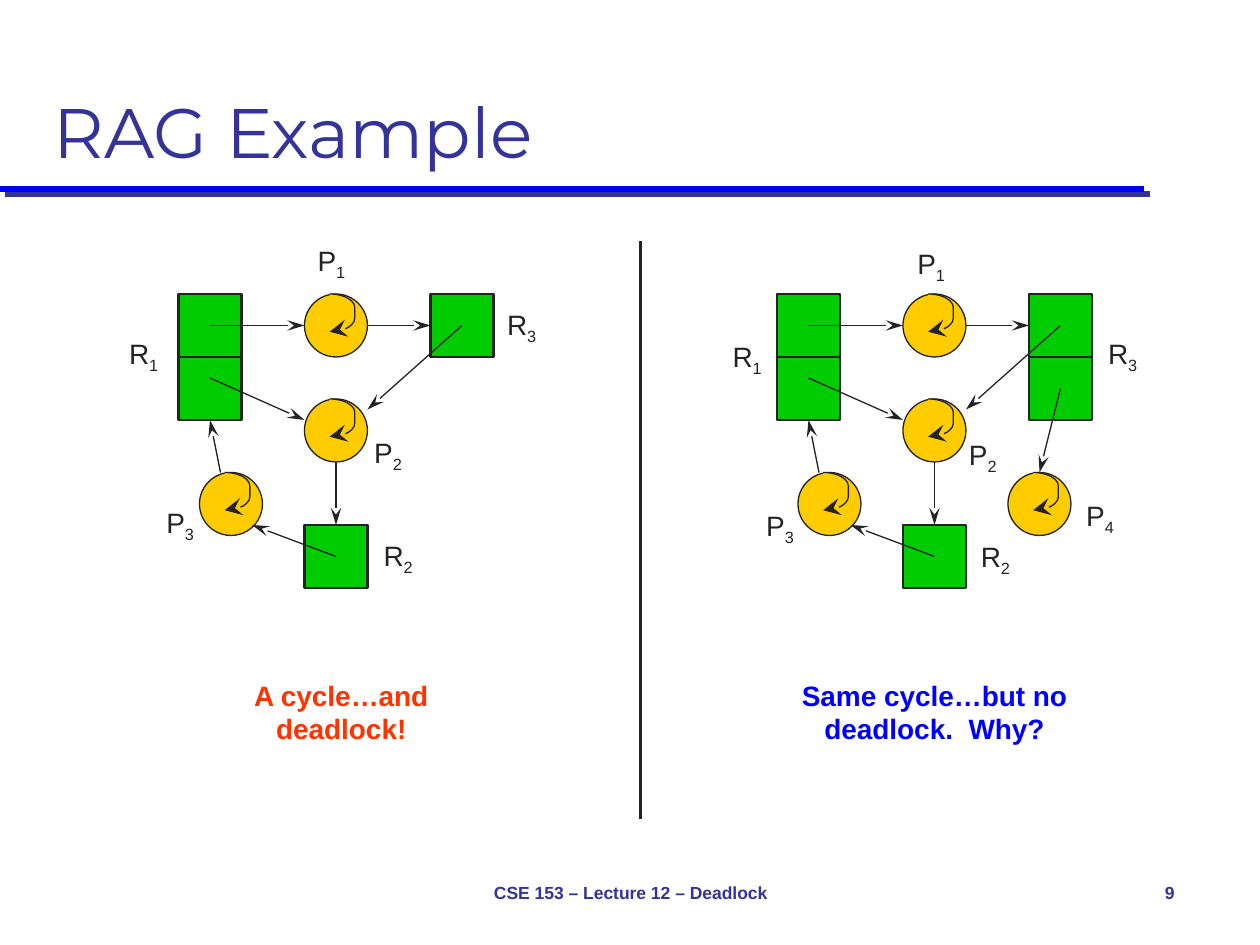
from lxml import etree
from pptx import Presentation, util as u
from pptx.dml.color import RGBColor
from pptx.enum import shapes as kinds, text as t
from pptx.oxml import ns

COLORS = {"navy": "333399", "blue": "0000FF", "red": "FF3300",
          "ink": "232323", "process": "FFCC00", "resource": "00CC00"}
GRID = 1 / 12          # inches per grid step
NODE = 6               # node side, in steps
TOP = 28               # first row of both graphs, in steps

# Places inside a graph are (column, row) steps from its top left corner.
RESOURCES = [(0, 0), (0, 6), (12, 22), (24, 0)]
PROCESSES = [(12, 0), (2, 17), (12, 10)]
EDGES = [((3, 3), (12, 3)), ((3, 8), (12, 12)), ((4, 17), (3, 12)),
         ((18, 3), (24, 3)), ((27, 3), (18, 11)), ((15, 25), (7, 22)),
         ((15, 16), (15, 22))]

# Label places are centres in inches.
GRAPHS = [
    dict(left=17, resources=RESOURCES, processes=PROCESSES, edges=EDGES,
         caption=("A cycle…and deadlock!", "red", 22, 21),
         labels=[("R1", 1.14, 2.82), ("P1", 2.63, 2.08), ("P2", 3.08, 3.6),
                 ("P3", 1.43, 4.16), ("R3", 4.14, 2.59), ("R2", 3.16, 4.42)]),
    dict(left=74, resources=RESOURCES + [(24, 6)],
         processes=PROCESSES + [(22, 17)],
         edges=EDGES + [((27, 9), (25, 17))],
         caption=("Same cycle…but no deadlock.  Why?", "blue", 75, 28),
         labels=[("R1", 5.93, 2.84), ("P1", 7.39, 2.1), ("P2", 7.8, 3.62),
                 ("P3", 6.19, 4.18), ("R3", 8.91, 2.82), ("R2", 7.9, 4.43),
                 ("P4", 8.73, 4.1)]),
]

prs = Presentation()
prs.slide_width, prs.slide_height = u.Inches(10), u.Inches(7.5)
slide = prs.slides.add_slide(prs.slide_layouts[6])


def rgb(name):
    return RGBColor.from_string(COLORS[name])


def steps(*values):
    return [u.Inches(value * GRID) for value in values]


def add_arrowhead(item, width):
    etree.SubElement(item.line._get_or_add_ln(), ns.qn("a:tailEnd"),
                     type="stealth", w=width, len="lg")


def add_line(start, end, color="ink", width=0.75):
    line = slide.shapes.add_connector(kinds.MSO_CONNECTOR.STRAIGHT,
                                      *steps(*start, *end))
    line.line.color.rgb = rgb(color)
    line.line.width = u.Pt(width)
    return line


def add_effects(line):
    return etree.SubElement(line._element.spPr, ns.qn("a:effectLst"))


def add_node(parent, kind, box, fill, width):
    node = parent.add_shape(kind, *steps(*box))
    node.shadow.inherit = False
    node.fill.solid()
    node.fill.fore_color.rgb = rgb(fill)
    node.line.color.rgb = rgb("ink")
    node.line.width = u.Pt(width)
    return node


def add_process(x, y):
    """Circle with a looping arrow inside, as one group."""
    group = slide.shapes.add_group_shape().shapes
    add_node(group, kinds.MSO_SHAPE.OVAL, (x, y, NODE, NODE), "process", 0.75)
    loop = add_node(group, kinds.MSO_SHAPE.RIGHT_BRACKET,
                    (x + 0.4 * NODE, y, 0.4 * NODE, 0.6 * NODE),
                    "process", 0.75)
    loop.adjustments[0] = 0.54
    add_arrowhead(loop, "lg")


def add_text(runs, box, size, color, align="CENTER", anchor="MIDDLE",
             font="Arial", bold=False, wrap=False):
    frame = slide.shapes.add_textbox(*map(u.Inches, box)).text_frame
    frame.word_wrap = wrap
    frame.vertical_anchor = t.MSO_ANCHOR[anchor]
    line = frame.paragraphs[0]
    line.alignment = t.PP_ALIGN[align]
    line.font.name, line.font.size, line.font.bold = font, u.Pt(size), bold
    line.font.color.rgb = rgb(color)
    for words in runs:
        line.add_run().text = words
    return line


def add_label(name, x, y):
    line = add_text(name, (x - 0.22, y - 0.18, 0.44, 0.37), 16, "ink")
    line.runs[1].font._element.set("baseline", "-25000")


def add_graph(left, resources, processes, edges, caption, labels):
    for x, y in resources:
        add_node(slide.shapes, kinds.MSO_SHAPE.RECTANGLE,
                 (left + x, TOP + y, NODE, NODE), "resource", 1.5)
    for x, y in processes:
        add_process(left + x, TOP + y)
    for ends in edges:
        edge = add_line(*[(left + x, TOP + y) for x, y in ends])
        add_arrowhead(edge, "med")
        add_effects(edge)
    words, color, start, width = caption
    add_text([words], (start * GRID, 64 * GRID, width * GRID, 0.64), 16,
             color, anchor="TOP", bold=True, wrap=True)
    for label in labels:
        add_label(*label)


title_rule = add_line((0, 18), (109, 18), "blue", 3.5)
shadow = etree.SubElement(add_effects(title_rule), ns.qn("a:outerShdw"),
                          dist=str(u.Pt(4.2)), dir="2700000", algn="ctr",
                          rotWithShape="0")
etree.SubElement(shadow, ns.qn("a:srgbClr"), val=COLORS["navy"])

add_text(["RAG Example"], (0.33, 0.17, 9.33, 1.25), 40, "navy",
         align="LEFT", anchor="BOTTOM", font="Montserrat", wrap=True)
add_text(["CSE 153 – Lecture 12 – Deadlock"], (3.42, 6.83, 3.17, 0.5), 10,
         "navy", bold=True)
add_text(["9"], (8.75, 6.83, 0.67, 0.5), 10, "navy", align="RIGHT",
         bold=True, wrap=True)

add_effects(add_line((61, 23), (61, 78), width=2))
for graph in GRAPHS:
    add_graph(**graph)

prs.save("out.pptx")
